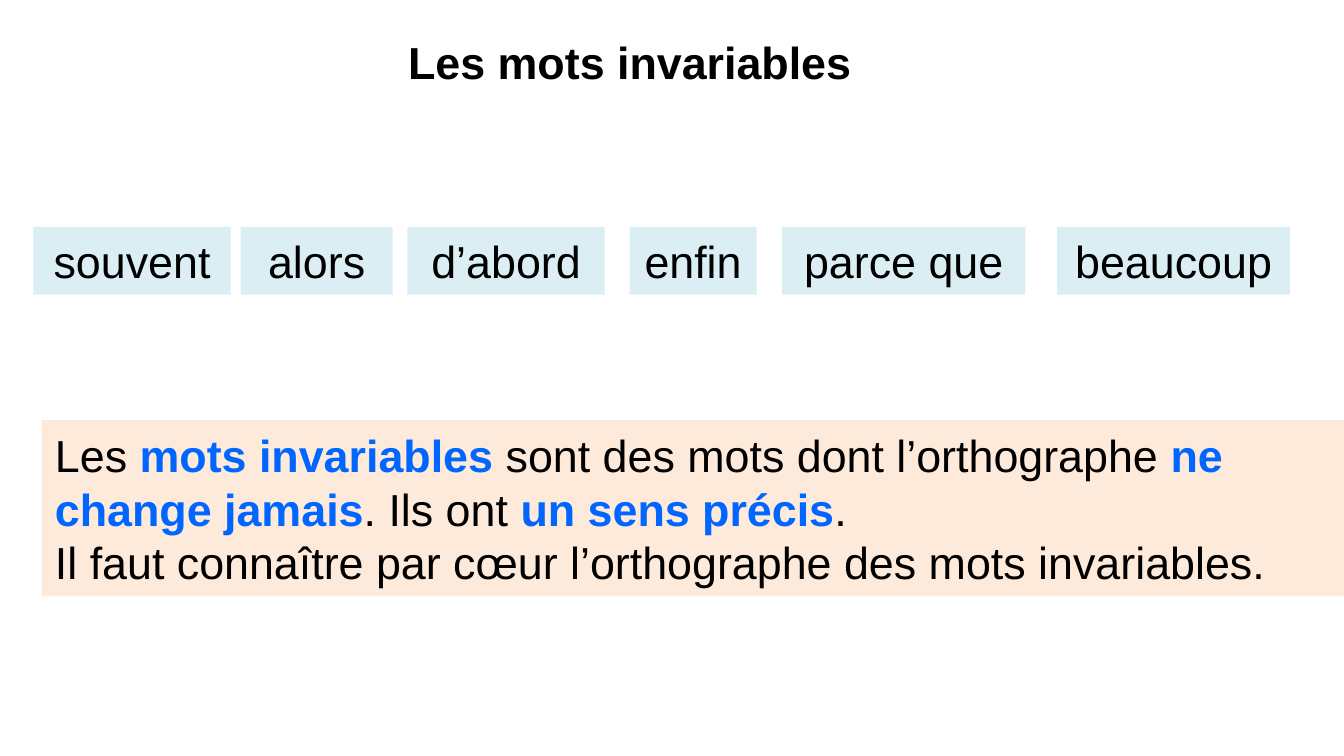
from dataclasses import dataclass

from pptx import Presentation
from pptx.dml.color import RGBColor
from pptx.enum.shapes import MSO_SHAPE
from pptx.enum.text import MSO_ANCHOR, MSO_AUTO_SIZE, PP_ALIGN
from pptx.util import Cm, Pt

RECTANGLE = MSO_SHAPE.RECTANGLE
MIDDLE = MSO_ANCHOR.MIDDLE
NO_AUTOFIT = MSO_AUTO_SIZE.NONE
LEFT = PP_ALIGN.LEFT
CENTER = PP_ALIGN.CENTER
TITLE_ONLY = 5


@dataclass(frozen=True)
class Theme:
    font: str = "Arial"
    size: int = 24
    text: str = "000000"
    accent: str = "0066FF"
    word_fill: str = "DBEEF4"
    rule_fill: str = "FDEADA"


class LessonSlide:
    def __init__(self, deck, theme):
        self.theme = theme
        self.page = deck.slides.add_slide(deck.slide_layouts[TITLE_ONLY])

    def fill_text(self, box, paragraphs, align):
        frame = box.text_frame
        frame_format = {
            "word_wrap": True,
            "auto_size": NO_AUTOFIT,
            "vertical_anchor": MIDDLE,
        }
        for name, value in frame_format.items():
            setattr(frame, name, value)
        for index, spans in enumerate(paragraphs):
            para = frame.add_paragraph() if index else frame.paragraphs[0]
            para.alignment = align
            for text, color, bold in spans:
                span = para.add_run()
                span.text = text
                span.font.color.rgb = RGBColor.from_string(color)
                font_format = {
                    "name": self.theme.font,
                    "size": Pt(self.theme.size),
                    "bold": bold,
                }
                for name, value in font_format.items():
                    setattr(span.font, name, value)

    def title(self, text, left, top, width, height):
        box = self.page.shapes.title
        place = {"left": left, "top": top, "width": width, "height": height}
        for name, value in place.items():
            setattr(box, name, Cm(value))
        self.fill_text(box, [[(text, self.theme.text, True)]], CENTER)

    def panel(self, left, top, width, height, fill, paragraphs, align):
        box = self.page.shapes.add_shape(
            RECTANGLE, Cm(left), Cm(top), Cm(width), Cm(height)
        )
        box.shadow.inherit = False
        box.fill.solid()
        box.fill.fore_color.rgb = RGBColor.from_string(fill)
        box.line.fill.background()
        self.fill_text(box, paragraphs, align)

    def word(self, text, left, width):
        spans = [(text, self.theme.text, False)]
        self.panel(left, 4.29, width, 1.28, self.theme.word_fill, [spans], CENTER)

    def rule(self, paragraphs, left, top, width, height):
        styles = {
            False: (self.theme.text, False),
            True: (self.theme.accent, True),
        }
        styled = [
            [(text, *styles[strong]) for text, strong in spans]
            for spans in paragraphs
        ]
        self.panel(left, top, width, height, self.theme.rule_fill, styled, LEFT)


def main():
    deck = Presentation()
    deck.slide_width = Cm(25.4)
    deck.slide_height = Cm(14.29)

    lesson = LessonSlide(deck, Theme())
    lesson.title("Les mots invariables", 2.9, 0.53, 18, 1.28)

    words = [
        ("souvent", 0.63, 3.73),
        ("alors", 4.55, 2.87),
        ("d’abord", 7.7, 3.73),
        ("enfin", 11.9, 2.4),
        ("parce que", 14.78, 4.6),
        ("beaucoup", 19.98, 4.4),
    ]
    for text, left, width in words:
        lesson.word(text, left, width)

    rule = [
        [
            ("Les ", False),
            ("mots invariables ", True),
            ("sont des mots dont l’orthographe ", False),
            ("ne change jamais", True),
            (". Ils ont ", False),
            ("un sens précis", True),
            (".", False),
        ],
        [("Il faut connaître par cœur l’orthographe des mots invariables.", False)],
    ]
    lesson.rule(rule, 0.79, 7.94, 24.61, 3.33)

    deck.save("out.pptx")


if __name__ == "__main__":
    main()
